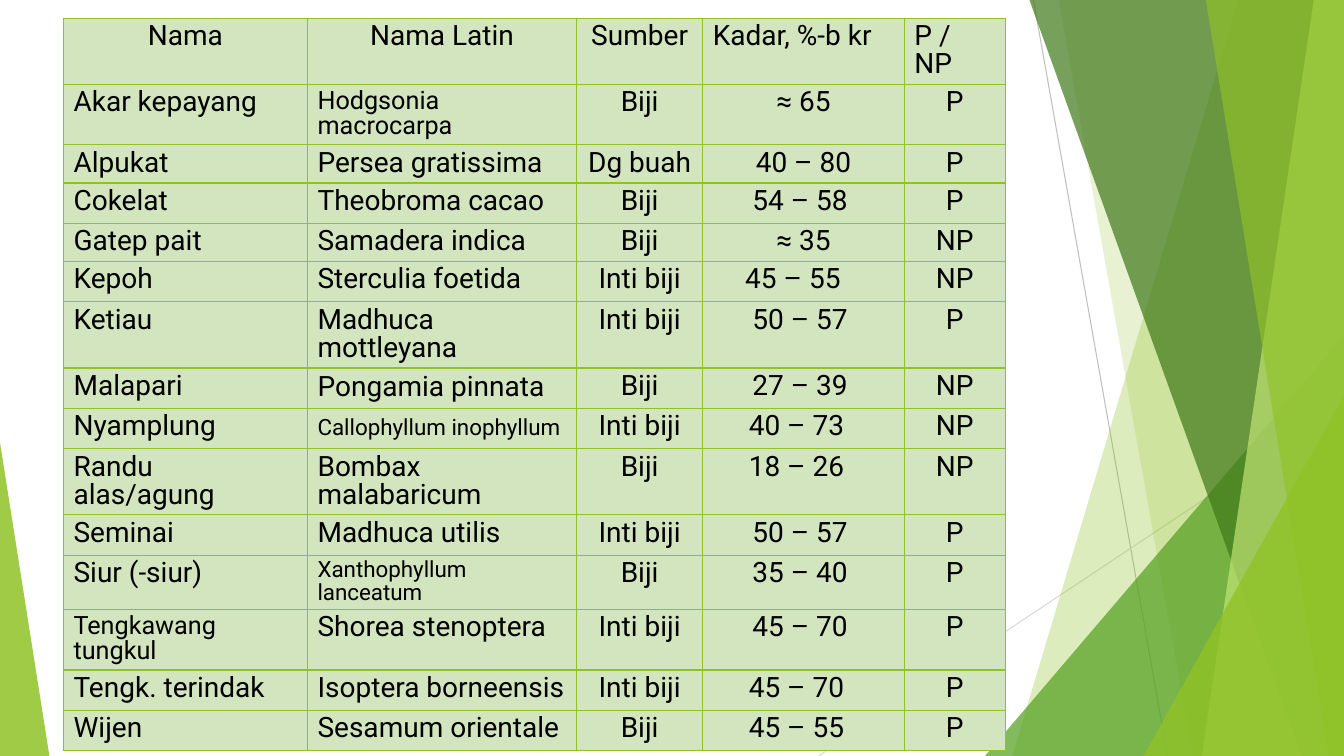
import collections
import dataclasses

import lxml.etree
import pptx
import pptx.dml.color
import pptx.enum.shapes
import pptx.enum.text
import pptx.oxml
import pptx.oxml.ns
import pptx.util

SCALE = 9144  # EMU in one px, 100 px to the inch
Box = collections.namedtuple("Box", "left top width height")


@dataclasses.dataclass(frozen=True)
class Theme:
    font: str = "Roboto"
    text: str = "000000"
    lime: str = "90C226"
    green: str = "54A021"
    forest: str = "3F7819"
    pale: str = "C0E474"
    cell: str = "D3E5BE"
    line_dark: str = "BFBFBF"
    line_light: str = "D9D9D9"
    body: int = 20
    small: int = 18
    smallest: int = 16


THEME = Theme()
SLIDE = Box(0, 0, 1333, 750)
TABLE = Box(63, 18, 933, 709)
COLUMN_WIDTHS = [242, 267, 125, 200, 100]
ROW_HEIGHTS = [38, 38, 38, 40, 38, 40, 40, 40, 40, 40, 40, 41, 40, 40, 40]
MARGIN = 10

HEADER = ["Nama", "Nama Latin", "Sumber", "Kadar, %-b kr", "P / NP"]
PLANTS = [
    ["Akar kepayang", "Hodgsonia macrocarpa", "Biji", "≈ 65", "P"],
    ["Alpukat", "Persea gratissima", "Dg buah", "40 – 80", "P"],
    ["Cokelat", "Theobroma cacao", "Biji", "54 – 58", "P"],
    ["Gatep pait", "Samadera indica", "Biji", "≈ 35", "NP"],
    ["Kepoh", "Sterculia foetida", "Inti biji", "45 – 55", "NP"],
    ["Ketiau", "Madhuca mottleyana", "Inti biji", "50 – 57", "P"],
    ["Malapari", "Pongamia pinnata", "Biji", "27 – 39", "NP"],
    ["Nyamplung", "Callophyllum inophyllum", "Inti biji", "40 – 73", "NP"],
    ["Randu alas/agung", "Bombax malabaricum", "Biji", "18 – 26", "NP"],
    ["Seminai", "Madhuca utilis", "Inti biji", "50 – 57", "P"],
    ["Siur (-siur)", "Xanthophyllum lanceatum", "Biji", "35 – 40", "P"],
    ["Tengkawang tungkul", "Shorea stenoptera", "Inti biji", "45 – 70", "P"],
    ["Tengk. terindak", "Isoptera borneensis", "Inti biji", "45 – 70", "P"],
    ["Wijen", "Sesamum orientale", "Biji", "45 – 55", "P"],
]
# Extra right margin of the Kadar column, one per plant
KADAR_INDENTS = [0, 0, 7, 0, 21, 7, 7, 14, 14, 7, 7, 7, 14, 14]
SIZES = {
    "Hodgsonia macrocarpa": THEME.small,
    "Tengkawang tungkul": THEME.small,
    "Callophyllum inophyllum": THEME.smallest,
    "Xanthophyllum lanceatum": THEME.smallest,
}
MIDDLE = {"Pongamia pinnata", "Callophyllum inophyllum", "Xanthophyllum lanceatum"}


def px(length):
    return pptx.util.Emu(length * SCALE)


def rgb(color):
    return pptx.dml.color.RGBColor.from_string(color)


def paint(shape, color, opacity):
    shape.shadow.inherit = False
    shape.fill.solid()
    shape.fill.fore_color.rgb = rgb(color)
    shape.line.fill.background()
    value = next(shape.element.iter(pptx.oxml.ns.qn("a:srgbClr")))
    lxml.etree.SubElement(value, pptx.oxml.ns.qn("a:alpha"), val=str(opacity * 1000))


def add_hairline(page, box, start, end, color):
    line = page.shapes.add_connector(
        pptx.enum.shapes.MSO_CONNECTOR.STRAIGHT,
        px(box.left + start[0]), px(box.top + start[1]),
        px(box.left + end[0]), px(box.top + end[1]))
    line.line.color.rgb = rgb(color)
    line.line.width = pptx.util.Pt(0.75)
    lxml.etree.SubElement(line.element.spPr, pptx.oxml.ns.qn("a:effectLst"))


def add_shard(page, box, top_left, bottom_left, color, opacity):
    """A band from a slanted left edge to the right edge of the box."""
    builder = page.shapes.build_freeform(top_left, 0, scale=SCALE)
    builder.add_line_segments(
        [(box.width, 0), (box.width, box.height), (bottom_left, box.height)])
    paint(builder.convert_to_shape(px(box.left), px(box.top)), color, opacity)


def add_corner(page, box, left, width, height, apex, color, opacity):
    """A right triangle standing on the bottom of the box."""
    corner = page.shapes.add_shape(
        pptx.enum.shapes.MSO_SHAPE.ISOSCELES_TRIANGLE,
        px(box.left + left), px(box.top + box.height - height), px(width), px(height))
    corner.adjustments[0] = apex
    paint(corner, color, opacity)


def draw_facets(page, box):
    right, bottom = box.width, box.height
    add_hairline(page, box, (1025, 0), (1158, bottom), THEME.line_dark)
    add_hairline(page, box, (right, 403), (812, bottom), THEME.line_light)
    add_shard(page, box, 1228, 1004, THEME.lime, 30)
    add_shard(page, box, 1050, 1183, THEME.lime, 20)
    add_corner(page, box, right - 356, 356, 417, 1, THEME.green, 72)
    add_shard(page, box, 1021, 1291, THEME.forest, 70)
    add_shard(page, box, 1303, 1192, THEME.pale, 70)
    add_shard(page, box, 1196, 1318, THEME.lime, 65)
    add_corner(page, box, right - 199, 199, 357, 1, THEME.lime, 80)
    add_corner(page, box, 0, 49, 311, 0, THEME.lime, 85)


def style_cell(cell):
    cell.margin_left = cell.margin_right = px(MARGIN)
    cell.margin_top = cell.margin_bottom = px(MARGIN // 2)
    properties = cell._tc.get_or_add_tcPr()
    for side in ("lnL", "lnR", "lnT", "lnB"):
        properties.append(pptx.oxml.parse_xml(
            f'<a:{side} {pptx.oxml.ns.nsdecls("a")} w="12700"><a:solidFill>'
            f'<a:srgbClr val="{THEME.lime}"/></a:solidFill></a:{side}>'))
    cell.fill.solid()
    cell.fill.fore_color.rgb = rgb(THEME.cell)


def write_cell(cell, text, centred):
    anchors = pptx.enum.text.MSO_ANCHOR
    cell.vertical_anchor = anchors.MIDDLE if text in MIDDLE else anchors.TOP
    para = cell.text_frame.paragraphs[0]
    aligns = pptx.enum.text.PP_ALIGN
    para.alignment = aligns.CENTER if centred else aligns.LEFT
    para.line_spacing = 0.85
    # Space before, as a share of the line
    para._p.get_or_add_pPr().append(pptx.oxml.parse_xml(
        f'<a:spcBef {pptx.oxml.ns.nsdecls("a")}><a:spcPct val="20000"/></a:spcBef>'))
    span = para.add_run()
    span.text = text
    span.font.name = THEME.font
    span.font.size = pptx.util.Pt(SIZES.get(text, THEME.body))
    span.font.color.rgb = rgb(THEME.text)


def draw_plant_table(page, box):
    rows = [HEADER] + PLANTS
    table = page.shapes.add_table(
        len(rows), len(HEADER), px(box.left), px(box.top),
        px(box.width), px(box.height)).table
    table.first_row = table.horz_banding = False
    for column, width in zip(table.columns, COLUMN_WIDTHS):
        column.width = px(width)
    for row, height in zip(table.rows, ROW_HEIGHTS):
        row.height = px(height)
    for r, texts in enumerate(rows):
        for c, text in enumerate(texts):
            style_cell(table.cell(r, c))
            # Header centres its first three columns, plants their last three
            write_cell(table.cell(r, c), text, c < 3 if r == 0 else c > 1)
    for r, indent in enumerate(KADAR_INDENTS, start=1):
        table.cell(r, 3).margin_right = px(MARGIN + indent)


def main():
    deck = pptx.Presentation()
    deck.slide_width, deck.slide_height = px(SLIDE.width), px(SLIDE.height)
    page = deck.slides.add_slide(deck.slide_layouts[6])
    draw_facets(page, SLIDE)
    draw_plant_table(page, TABLE)
    deck.save("out.pptx")


if __name__ == "__main__":
    main()
